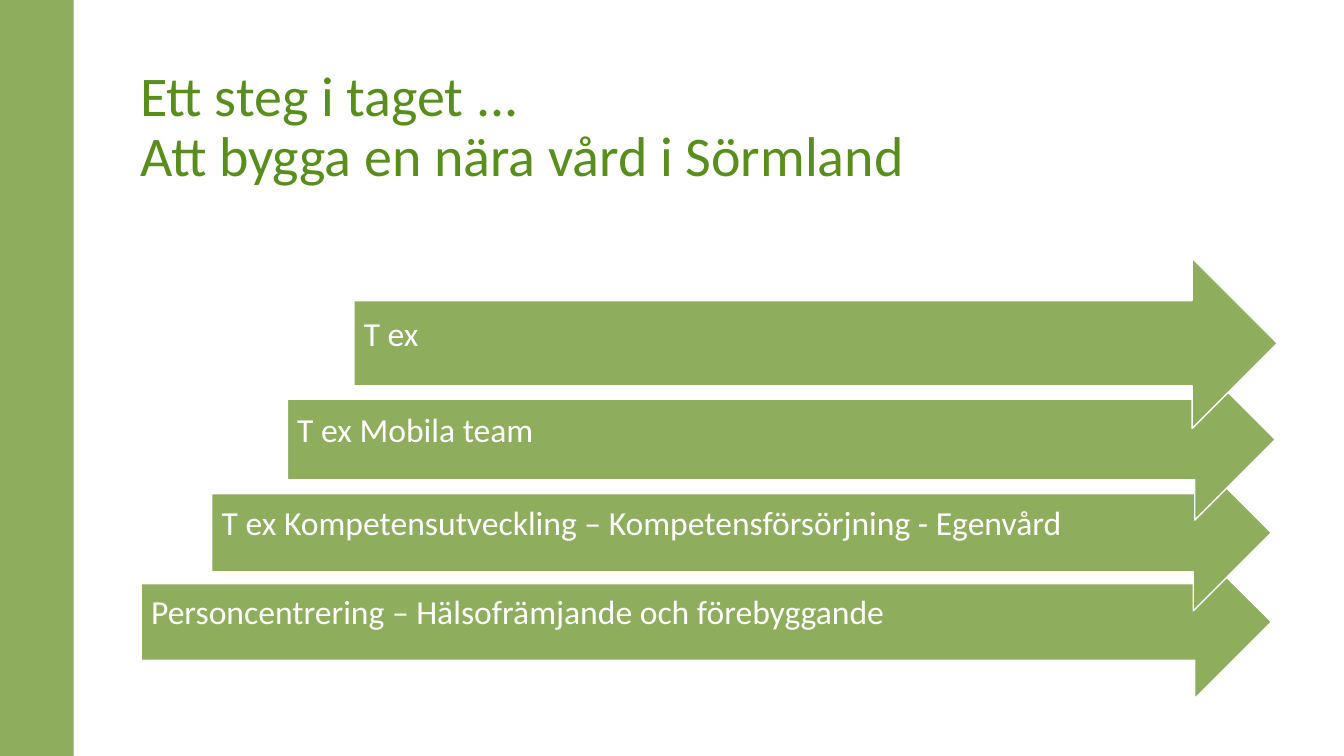
from dataclasses import dataclass

from pptx import Presentation
from pptx.dml.color import RGBColor
from pptx.enum.shapes import MSO_SHAPE as Preset
from pptx.enum.text import MSO_ANCHOR as Anchor, MSO_AUTO_SIZE as AutoSize, PP_ALIGN as Align
from pptx.shapes.autoshape import Shape
from pptx.slide import Slide
from pptx.text.text import TextFrame
from pptx.util import Inches, Pt

COLORS = {"green": "8EAD5D", "title": "598E1C", "white": "FFFFFF"}
FONT = "Calibri"


@dataclass
class Step:
    text: str
    left: float
    top: float
    width: float
    height: float


# From the bottom step up, so that each arrow overlaps the one below it
STEPS = [
    Step("Personcentrering – Hälsofrämjande och förebyggande", 1.4, 5.41, 11.21, 1.52),
    Step("T ex Kompetensutveckling – Kompetensförsörjning - Egenvård", 2.1, 4.51, 10.51, 1.55),
    Step("T ex Mobila team", 2.85, 3.56, 9.8, 1.6),
    Step("T ex", 3.51, 2.56, 9.16, 1.69),
]


def color(name: str) -> RGBColor:
    return RGBColor.from_string(COLORS[name])


def format_text(text_frame: TextFrame, size: float, color_name: str) -> None:
    text_frame.word_wrap = True
    text_frame.auto_size = AutoSize.NONE
    text_frame.vertical_anchor = Anchor.MIDDLE
    for paragraph in text_frame.paragraphs:
        paragraph.alignment = Align.LEFT
        paragraph.line_spacing = 0.9
        for run in paragraph.runs:
            run.font.name = FONT
            run.font.size = Pt(size)
            run.font.color.rgb = color(color_name)


def add_green_shape(slide: Slide, preset: Preset, left: float, top: float,
                    width: float, height: float) -> Shape:
    shape = slide.shapes.add_shape(
        preset, Inches(left), Inches(top), Inches(width), Inches(height))
    shape.shadow.inherit = False
    shape.fill.solid()
    shape.fill.fore_color.rgb = color("green")
    return shape


def add_title(slide: Slide, text: str) -> None:
    title = slide.shapes.title
    title.left, title.top = Inches(1.29), Inches(0.83)
    title.width, title.height = Inches(11.42), Inches(0.89)
    title.text_frame.text = text
    format_text(title.text_frame, 40, "title")


def add_step_arrow(slide: Slide, step: Step) -> None:
    arrow = add_green_shape(
        slide, Preset.RIGHT_ARROW, step.left, step.top, step.width, step.height)
    arrow.line.color.rgb = color("white")
    arrow.line.width = Pt(1)
    text_frame = arrow.text_frame
    text_frame.margin_left = text_frame.margin_top = Inches(0.1)
    text_frame.margin_right, text_frame.margin_bottom = Inches(0.28), Inches(0.26)
    text_frame.text = step.text
    format_text(text_frame, 24, "white")


def main() -> None:
    presentation = Presentation()
    presentation.slide_width = Inches(13.33)
    presentation.slide_height = Inches(7.5)
    slide = presentation.slides.add_slide(presentation.slide_layouts.get_by_name("Title Only"))

    side_band = add_green_shape(slide, Preset.RECTANGLE, 0, 0, 0.73, 7.5)
    side_band.line.fill.background()
    add_title(slide, "Ett steg i taget ...\vAtt bygga en nära vård i Sörmland")
    for step in STEPS:
        add_step_arrow(slide, step)

    presentation.save("out.pptx")


if __name__ == "__main__":
    main()
